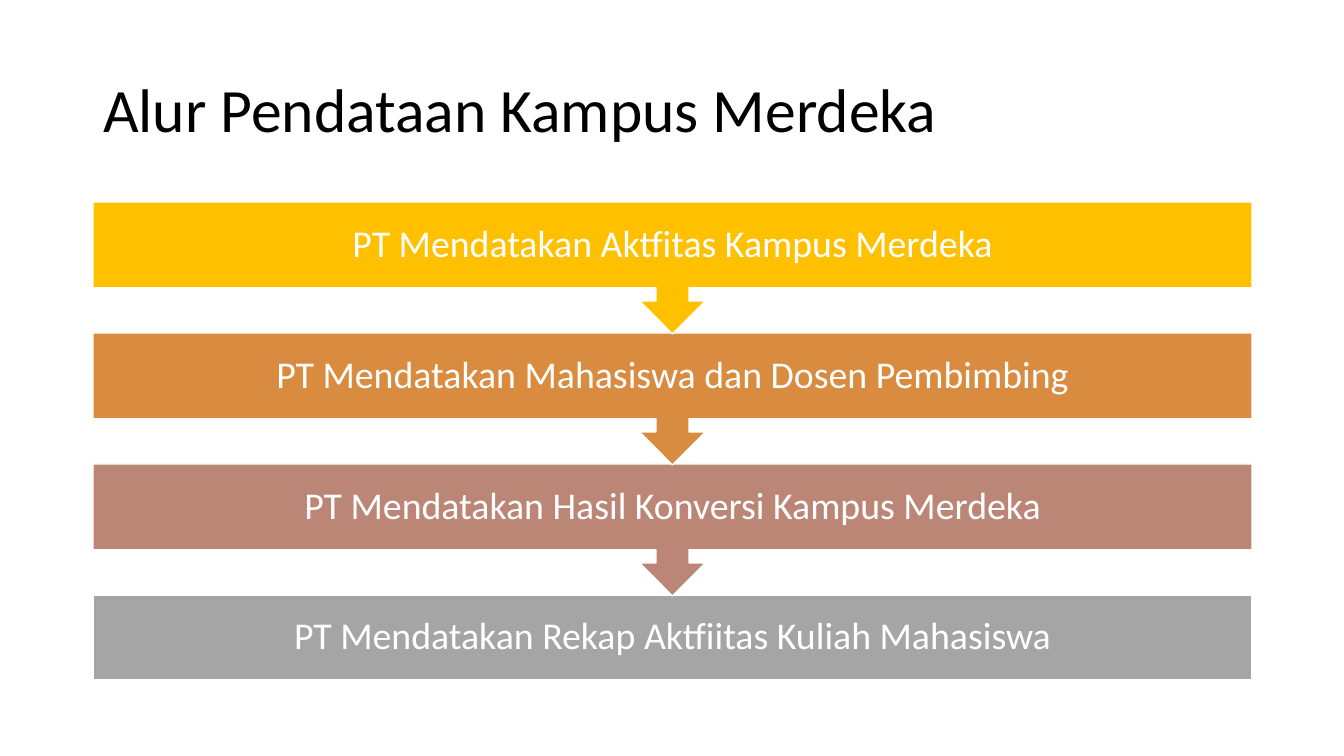
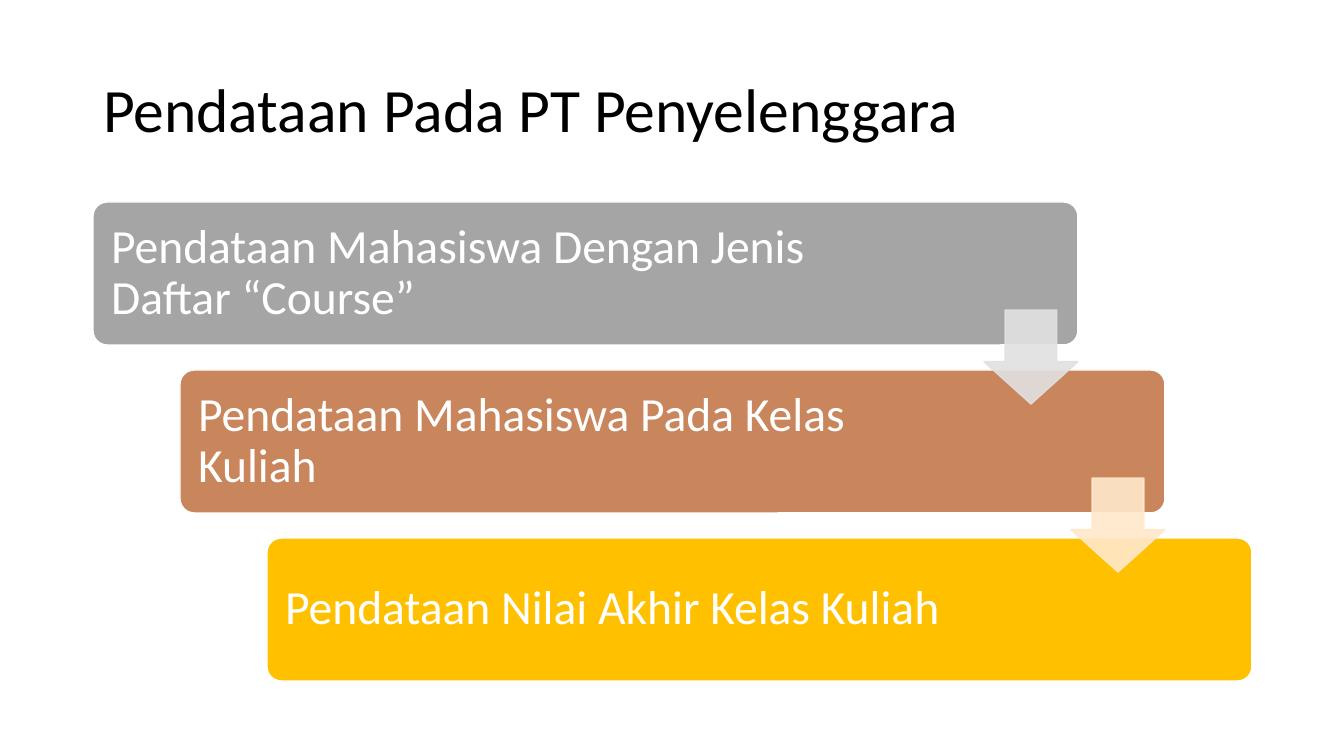
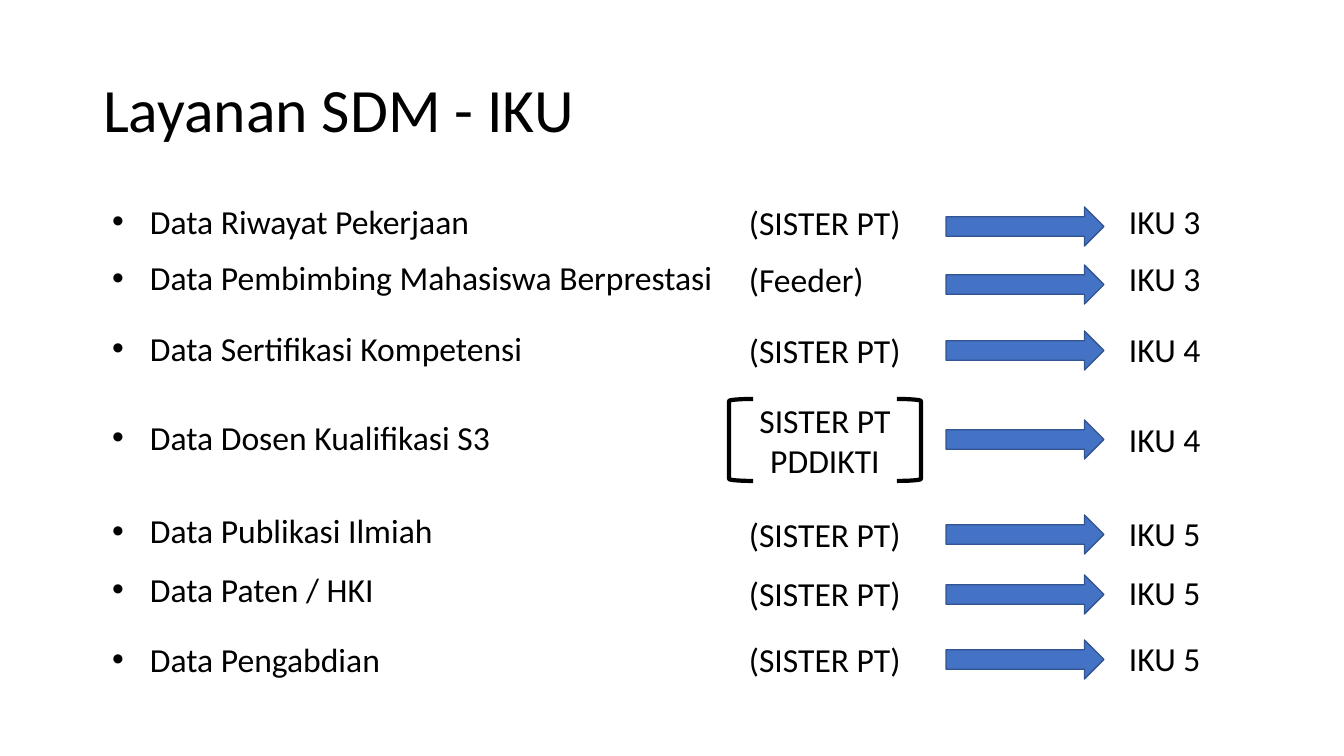
from lxml.etree import SubElement
from pptx import Presentation
from pptx.dml.color import RGBColor
from pptx.enum.shapes import MSO_SHAPE
from pptx.enum.text import MSO_ANCHOR, MSO_AUTO_SIZE, PP_ALIGN
from pptx.oxml.ns import qn
from pptx.util import Emu, Pt

SLIDE_WIDTH, SLIDE_HEIGHT = 1344, 756
EMU_PER_PX = 12192000 / SLIDE_WIDTH
PX_PER_PT = 1.4
FONT = "Calibri"
COLOURS = {
    "ink": "000000", "white": "FFFFFF", "grey": "A5A5A5", "gold": "FFC000",
    "orange": "D98B3F", "rose": "BB8676", "copper": "C9855C",
    "pale_grey": "E1E1E1", "pale_gold": "FFE8CB",
    "blue": "4472C4", "dark_blue": "325491",
}
TITLE_AREA = (93, 40, 1159, 146)

FLOW_TITLE = "Alur Pendataan Kampus Merdeka"
FLOW = [
    ("PT Mendatakan Aktfitas Kampus Merdeka", "gold"),
    ("PT Mendatakan Mahasiswa dan Dosen Pembimbing", "orange"),
    ("PT Mendatakan Hasil Konversi Kampus Merdeka", "rose"),
    ("PT Mendatakan Rekap Aktfiitas Kuliah Mahasiswa", "grey"),
]

STAIRS_TITLE = "Pendataan Pada PT Penyelenggara"
STAIRS = [
    ("Pendataan Mahasiswa Dengan Jenis Daftar “Course”", "grey"),
    ("Pendataan Mahasiswa Pada Kelas Kuliah", "copper"),
    ("Pendataan Nilai Akhir Kelas Kuliah", "gold"),
]
STAIR_ARROWS = ["pale_grey", "pale_gold"]

SERVICES_TITLE = "Layanan SDM - IKU"
# data, sources, indicator, top of data, top of indicator, top of arrow
SERVICES = [
    ("Data Riwayat Pekerjaan", ["(SISTER PT)"], "IKU 3", 196, 196, 207),
    ("Data Pembimbing Mahasiswa Berprestasi", ["(Feeder)"], "IKU 3", 253, 253, 265),
    ("Data Sertifikasi Kompetensi", ["(SISTER PT)"], "IKU 4", 324, 324, 331),
    ("Data Dosen Kualifikasi S3", ["SISTER PT", "PDDIKTI"], "IKU 4", 414, 414, 420),
    ("Data Publikasi Ilmiah", ["(SISTER PT)"], "IKU 5", 508, 508, 515),
    ("Data Paten / HKI", ["(SISTER PT)"], "IKU 5", 567, 567, 575),
    ("Data Pengabdian", ["(SISTER PT)"], "IKU 5", 638, 633, 640),
]
SERVICE_SIZE = 24
SERVICE_LINE = 41


def px(length):
    return Emu(round(length * EMU_PER_PX))


def colour(name):
    return RGBColor.from_string(COLOURS[name])


def place(shape, area):
    for side, length in zip(("left", "top", "width", "height"), area):
        setattr(shape, side, px(length))


def write(shape, lines, size, ink="ink", align=PP_ALIGN.LEFT, spacing=1.0, **frame_format):
    """Fill the shape with one paragraph per line; frame_format goes to its text frame."""
    frame = shape.text_frame
    frame_format = {"word_wrap": True, "auto_size": MSO_AUTO_SIZE.NONE, **frame_format}
    for name, value in frame_format.items():
        setattr(frame, name, value)
    frame.text = "\n".join(lines)
    for para in frame.paragraphs:
        para_format = {"alignment": align, "line_spacing": spacing,
                       "space_before": Pt(0), "space_after": Pt(0)}
        for name, value in para_format.items():
            setattr(para, name, value)
        for span in para.runs:
            for name, value in {"name": FONT, "size": Pt(size)}.items():
                setattr(span.font, name, value)
            span.font.color.rgb = colour(ink)


def add_text(page, area, lines, **text_format):
    box = page.shapes.add_textbox(*map(px, area))
    write(box, lines, SERVICE_SIZE, **text_format)


def add_figure(page, kind, area, fill=None, line="white", line_width=1, adjustments=()):
    shape = page.shapes.add_shape(kind, *map(px, area))
    shape.shadow.inherit = False
    for index, value in enumerate(adjustments):
        shape.adjustments[index] = value
    if fill:
        shape.fill.solid()
        shape.fill.fore_color.rgb = colour(fill)
    else:
        shape.fill.background()
    shape.line.color.rgb = colour(line)
    shape.line.width = Pt(line_width)
    return shape


def set_opacity(shape, percent):
    for tone in shape._element.spPr.iter(qn("a:srgbClr")):
        SubElement(tone, qn("a:alpha"), val=str(percent * 1000))


def add_page(deck, title, layout="Title Only"):
    page = deck.slides.add_slide(deck.slide_layouts.get_by_name(layout))
    place(page.shapes.title, TITLE_AREA)
    write(page.shapes.title, [title], 44, spacing=0.9, vertical_anchor=MSO_ANCHOR.MIDDLE)
    return page


def build_flow(deck):
    page = add_page(deck, FLOW_TITLE)
    left, top, width, step = 93, 202, 1159, 131
    bar_height, callout_height, inset = 85, 132, px(21)
    last = len(FLOW) - 1
    for index in range(last, -1, -1):  # upper arrow tips overlap the bars below
        text, fill = FLOW[index]
        kind, height = ((MSO_SHAPE.RECTANGLE, bar_height) if index == last
                        else (MSO_SHAPE.DOWN_ARROW_CALLOUT, callout_height))
        bar = add_figure(page, kind, (left, top + index * step, width, height), fill)
        write(bar, [text], 27, "white", PP_ALIGN.CENTER, 0.9,
              vertical_anchor=MSO_ANCHOR.MIDDLE, margin_left=inset, margin_right=inset,
              margin_top=inset, margin_bottom=inset)


def build_stairs(deck):
    page = add_page(deck, STAIRS_TITLE)
    step_x, step_y, inset = 87, 168, px(14)
    for index, (text, fill) in enumerate(STAIRS):
        area = (93 + index * step_x, 202 + index * step_y, 985, 143)
        stair = add_figure(page, MSO_SHAPE.ROUNDED_RECTANGLE, area, fill, adjustments=[0.1])
        write(stair, [text], 34, "white", spacing=0.9, vertical_anchor=MSO_ANCHOR.MIDDLE,
              margin_left=inset, margin_right=px(200), margin_top=inset, margin_bottom=inset)
    for index, tone in enumerate(STAIR_ARROWS):
        area = (984 + index * step_x, 310 + index * step_y, 94, 94)
        arrow = add_figure(page, MSO_SHAPE.DOWN_ARROW, area, tone, tone,
                           adjustments=[0.55, 0.45])
        set_opacity(arrow, 90)


def build_services(deck):
    page = add_page(deck, SERVICES_TITLE, "Title and Content")
    body = page.placeholders[1]
    tops = [service[3] for service in SERVICES]
    place(body, (102, tops[0], 628, tops[-1] - tops[0] + 50))
    write(body, [service[0] for service in SERVICES], SERVICE_SIZE,
          vertical_anchor=MSO_ANCHOR.TOP)
    for para, above, top in zip(body.text_frame.paragraphs[1:], tops, tops[1:]):
        para.space_before = Pt((top - above - SERVICE_LINE) / PX_PER_PT)

    for _, sources, indicator, _, top, arrow_top in SERVICES:
        if len(sources) > 1:
            add_text(page, (729, top - 19, 192, 91), sources, align=PP_ALIGN.CENTER)
            for kind, left in ((MSO_SHAPE.LEFT_BRACKET, 729), (MSO_SHAPE.RIGHT_BRACKET, 897)):
                add_figure(page, kind, (left, top - 15, 24, 82), line="ink", line_width=3)
        else:
            add_text(page, (739, top + 1, 182, 50), sources)
        add_figure(page, MSO_SHAPE.RIGHT_ARROW, (946, arrow_top, 158, 39), "blue", "dark_blue")
        add_text(page, (1119, top, 108, 50), [indicator])


def main():
    deck = Presentation()
    deck.slide_width, deck.slide_height = px(SLIDE_WIDTH), px(SLIDE_HEIGHT)
    for build in (build_flow, build_stairs, build_services):
        build(deck)
    deck.save("out.pptx")


if __name__ == "__main__":
    main()
